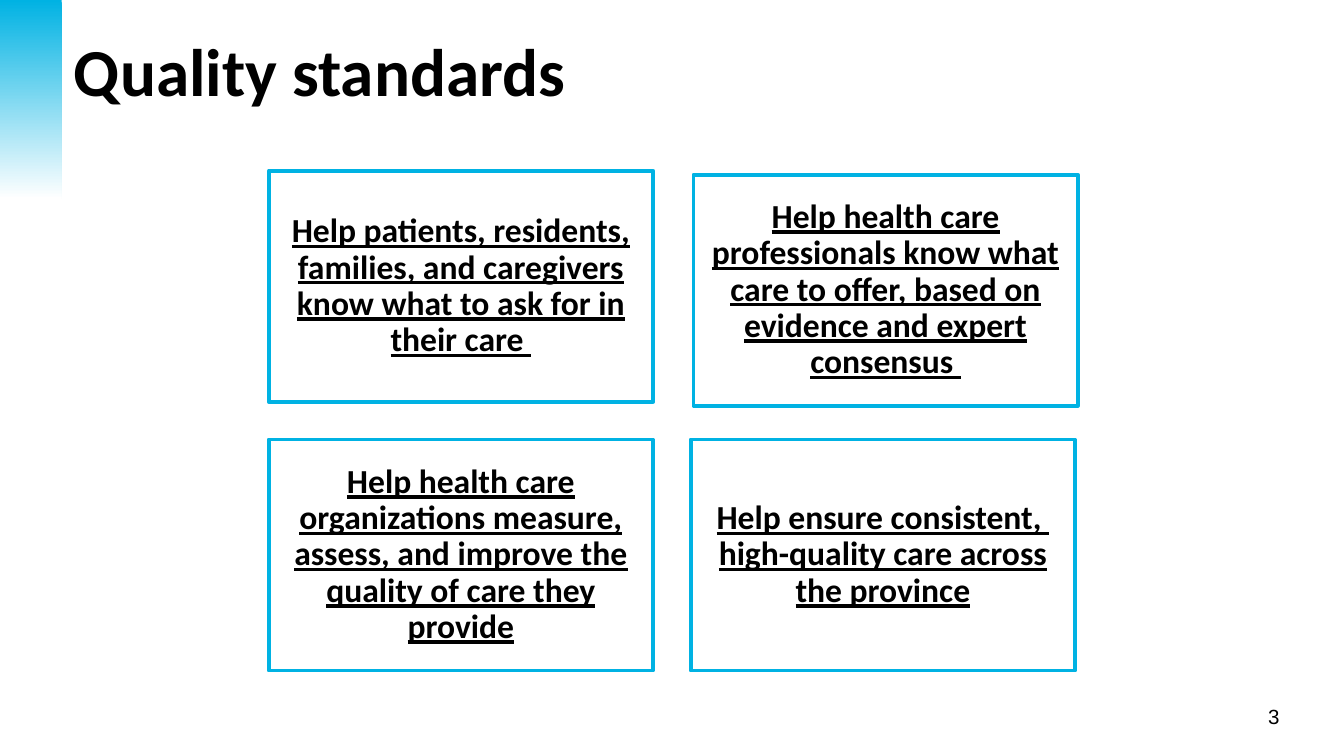
"""Build the quality standards slide."""
from pptx import Presentation
from pptx.dml.color import RGBColor
from pptx.enum.shapes import MSO_SHAPE as Shape
from pptx.enum.text import MSO_ANCHOR as Anchor, PP_ALIGN as Align
from pptx.util import Inches, Pt


def color(text):
    return RGBColor.from_string(text)


class Deck:
    font = "Calibri"
    ink = "000000"
    blue = "00B2E3"
    white = "FFFFFF"

    def __init__(self):
        self.file = Presentation()
        self.file.slide_width = Inches(10)
        self.file.slide_height = Inches(10 * 9 / 16)
        self.slide = self.file.slides.add_slide(self.file.slide_layouts[5])

    def run(self, para, text, size, font=None, bold=False, under=False):
        run = para.add_run()
        run.text = text
        run.font.name = font or self.font
        run.font.size = Pt(size)
        run.font.bold = bold
        run.font.underline = under
        run.font.color.rgb = color(self.ink)

    def rect(self, *box):
        shape = self.slide.shapes.add_shape(Shape.RECTANGLE, *map(Inches, box))
        shape.shadow.inherit = False
        return shape

    def title(self, text, *box):
        shape = self.slide.shapes.title
        shape.left, shape.top, shape.width, shape.height = map(Inches, box)
        frame = shape.text_frame
        frame.vertical_anchor = Anchor.TOP
        para = frame.paragraphs[0]
        para.alignment = Align.LEFT
        self.run(para, text, 36, bold=True)

    def fade(self, *box):
        shape = self.rect(*box)
        shape.line.fill.background()
        shape.fill.gradient()
        shape.fill.gradient_angle = 270
        for stop, tone in zip(shape.fill.gradient_stops, (self.blue, self.white)):
            stop.color.rgb = color(tone)

    def card(self, lines, *box):
        shape = self.rect(*box)
        shape.fill.background()
        shape.line.color.rgb = color(self.blue)
        shape.line.width = Pt(2)
        frame = shape.text_frame
        frame.word_wrap = True
        frame.vertical_anchor = Anchor.MIDDLE
        frame.margin_left = frame.margin_right = Inches(0.07)
        frame.margin_top = frame.margin_bottom = Inches(0.07)
        para = frame.paragraphs[0]
        para.alignment = Align.CENTER
        para.line_spacing = 0.9
        for i, line in enumerate(lines):
            if i:
                para.add_line_break()
            self.run(para, line, 18, bold=True, under=True)

    def number(self, text, *box):
        shape = self.slide.shapes.add_textbox(*map(Inches, box))
        shape.text_frame.word_wrap = True
        para = shape.text_frame.paragraphs[0]
        para.alignment = Align.RIGHT
        self.run(para, text, 11, font="Arial")


CARDS = [
    (2, 1.27, ["Help patients, residents, families, and caregivers know what "
               "to ask for in their care "]),
    (5.16, 1.3, ["Help health care professionals know what care to offer, "
                 "based on evidence and expert consensus "]),
    (2, 3.27, ["Help health care organizations measure, assess, and improve "
               "the quality of care they provide"]),
    (5.14, 3.27, ["Help ensure consistent, ",
                  "high-quality care across the province"]),
]


def main():
    deck = Deck()
    deck.number("3", 8.45, 5.19, 1.17, 0.29)
    deck.fade(0, 0, 0.46, 1.48)
    deck.title("Quality standards", 0.45, 0.17, 7.03, 0.79)
    for left, top, lines in CARDS:
        deck.card(lines, left, top, 2.86, 1.72)
    deck.file.save("out.pptx")


if __name__ == "__main__":
    main()
